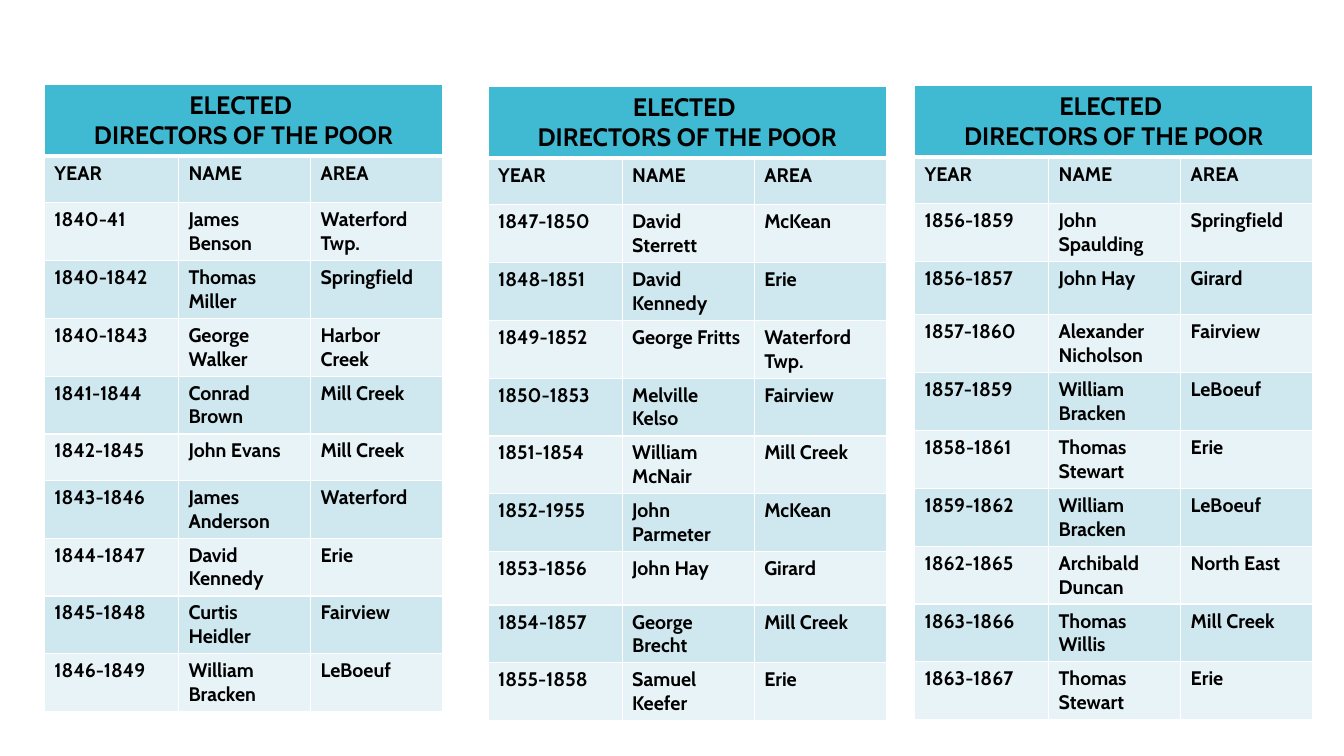
from dataclasses import dataclass

from lxml import etree
from pptx import Presentation
from pptx.dml.color import RGBColor
from pptx.enum.text import PP_ALIGN
from pptx.oxml.ns import qn
from pptx.util import Inches, Pt

CENTER, LEFT = PP_ALIGN.CENTER, PP_ALIGN.LEFT


@dataclass(frozen=True)
class Theme:
    font: str = "Cabin"
    text: str = "000000"
    title_fill: str = "40BAD2"
    bands: tuple = ("E8F3F7", "CFE7EE")
    border: str = "FFFFFF"
    title_size: int = 18
    body_size: int = 14
    thin: int = 1
    thick: int = 3


THEME = Theme()
BLANK_LAYOUT = 6
SLIDE_SIZE = (13.33, 7.5)
COLUMN_WIDTHS = (1.33, 1.31, 1.31)
ROW_HEIGHTS = (0.65, 0.46, 0.56, 0.53, 0.53, 0.53, 0.46, 0.53, 0.53, 0.53, 0.46)
TITLE = "ELECTED \nDIRECTORS OF THE POOR"
HEADINGS = ("YEAR", "NAME", "AREA")

TERMS_1840 = (
    ("1840-41", "James Benson", "Waterford Twp."),
    ("1840-1842", "Thomas Miller", "Springfield"),
    ("1840-1843", "George Walker", "Harbor Creek"),
    ("1841-1844", "Conrad Brown", "Mill Creek"),
    ("1842-1845", "John Evans", "Mill Creek"),
    ("1843-1846", "James Anderson", "Waterford"),
    ("1844-1847", "David Kennedy", "Erie"),
    ("1845-1848", "Curtis Heidler", "Fairview"),
    ("1846-1849", "William Bracken", "LeBoeuf"),
)
TERMS_1847 = (
    ("1847-1850", "David Sterrett", "McKean"),
    ("1848-1851", "David Kennedy", "Erie"),
    ("1849-1852", "George Fritts", "Waterford\nTwp."),
    ("1850-1853", "Melville Kelso", "Fairview"),
    ("1851-1854", "William McNair", "Mill Creek"),
    ("1852-1955", "John Parmeter", "McKean"),
    ("1853-1856", "John Hay", "Girard"),
    ("1854-1857", "George Brecht", "Mill Creek"),
    ("1855-1858", "Samuel Keefer", "Erie"),
)
TERMS_1856 = (
    ("1856-1859", "John Spaulding", "Springfield"),
    ("1856-1857", "John Hay", "Girard"),
    ("1857-1860", "Alexander Nicholson", "Fairview"),
    ("1857-1859", "William Bracken", "LeBoeuf"),
    ("1858-1861", "Thomas Stewart", "Erie"),
    ("1859-1862", "William Bracken", "LeBoeuf"),
    ("1862-1865", "Archibald Duncan", "North East"),
    ("1863-1866", "Thomas Willis", "Mill Creek"),
    ("1863-1867", "Thomas Stewart", "Erie"),
)
# Left and top of each table, with its terms of office
TABLES = ((0.44, 0.84, TERMS_1840), (4.84, 0.86, TERMS_1847), (9.07, 0.85, TERMS_1856))


def write_text(frame, text, size=THEME.body_size, align=LEFT, bold=True):
    """Write each line of the text as its own paragraph."""
    frame.text = text
    for para in frame.paragraphs:
        para.alignment = align
        for span in para.runs:
            span.font.name = THEME.font
            span.font.size = Pt(size)
            span.font.bold = bold
            span.font.color.rgb = RGBColor.from_string(THEME.text)


def set_borders(cell, top=THEME.thin, bottom=THEME.thin):
    properties = cell._tc.get_or_add_tcPr()
    widths = {"lnL": THEME.thin, "lnR": THEME.thin, "lnT": top, "lnB": bottom}
    for position, (side, width) in enumerate(widths.items()):
        line = etree.Element(qn(f"a:{side}"), w=str(Pt(width)))
        fill = etree.SubElement(line, qn("a:solidFill"))
        etree.SubElement(fill, qn("a:srgbClr"), val=THEME.border)
        properties.insert(position, line)


def style_cell(cell, color, **borders):
    cell.fill.solid()
    cell.fill.fore_color.rgb = RGBColor.from_string(color)
    set_borders(cell, **borders)


def add_title_row(table):
    last = len(COLUMN_WIDTHS) - 1
    table.cell(0, 0).merge(table.cell(0, last))
    for cell in table.rows[0].cells:
        style_cell(cell, THEME.title_fill, bottom=THEME.thick)
    write_text(table.cell(0, 0).text_frame, TITLE, size=THEME.title_size, align=CENTER)


def add_directors_table(page, left, top, terms):
    box = [Inches(length) for length in (left, top, sum(COLUMN_WIDTHS), sum(ROW_HEIGHTS))]
    table = page.shapes.add_table(len(ROW_HEIGHTS), len(COLUMN_WIDTHS), *box).table
    for column, width in zip(table.columns, COLUMN_WIDTHS):
        column.width = Inches(width)
    for row, height in zip(table.rows, ROW_HEIGHTS):
        row.height = Inches(height)

    add_title_row(table)
    for row_number, values in enumerate((HEADINGS, *terms), start=1):
        top_width = THEME.thick if row_number == 1 else THEME.thin
        for column_number, value in enumerate(values):
            cell = table.cell(row_number, column_number)
            style_cell(cell, THEME.bands[row_number % 2], top=top_width)
            write_text(cell.text_frame, value)


def main():
    deck = Presentation()
    deck.slide_width, deck.slide_height = (Inches(length) for length in SLIDE_SIZE)
    page = deck.slides.add_slide(deck.slide_layouts[BLANK_LAYOUT])
    for left, top, terms in TABLES:
        add_directors_table(page, left, top, terms)
    deck.save("out.pptx")


if __name__ == "__main__":
    main()
